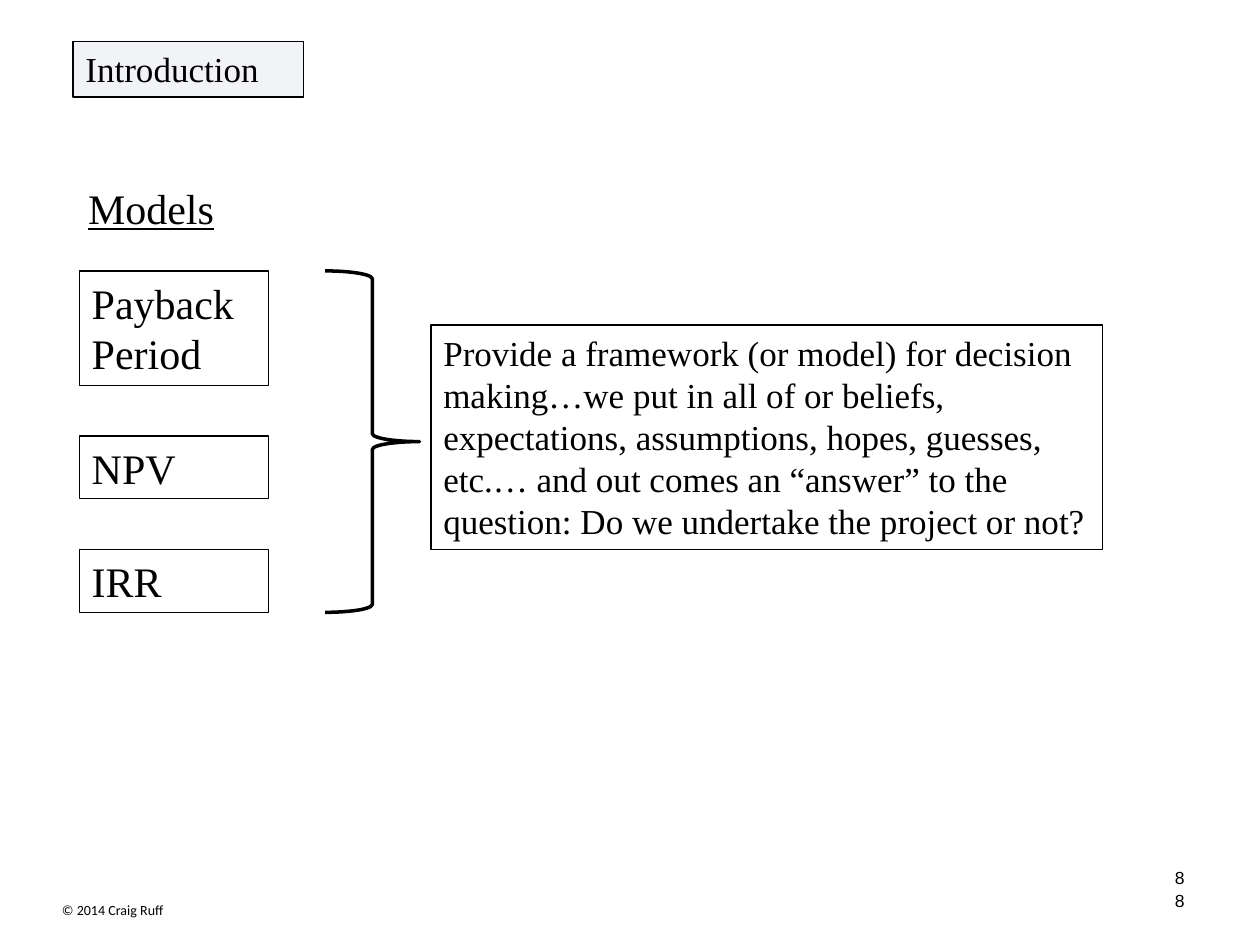
from lxml import etree
from pptx import Presentation
from pptx import util as u
from pptx.dml.color import RGBColor
from pptx.enum import shapes, text
from pptx.oxml import ns

BLACK = "000000"
SERIF = "Times New Roman"


def color(value):
    return RGBColor.from_string(value)


def add_text(words, left, top, width, height, size=24, font=SERIF, framed=False,
             underline=None, align=text.PP_ALIGN.LEFT, anchor=text.MSO_ANCHOR.TOP):
    place = [u.Inches(length) for length in (left, top, width, height)]
    if framed:
        box = page.shapes.add_shape(shapes.MSO_SHAPE.RECTANGLE, *place)
        box.shadow.inherit = False
        box.fill.background()
        box.line.color.rgb = color(BLACK)
        box.line.width = u.Pt(0.75)
    else:
        box = page.shapes.add_textbox(*place)
    frame = box.text_frame
    frame.word_wrap = True
    frame.vertical_anchor = anchor
    para = frame.paragraphs[0]
    para.alignment = align
    span = para.add_run()
    span.text = words
    span.font.size = u.Pt(size)
    span.font.name = font
    span.font.underline = underline
    span.font.color.rgb = color(BLACK)
    return box


deck = Presentation()
deck.slide_width, deck.slide_height = u.Inches(10), u.Inches(7.5)
page = deck.slides.add_slide(deck.slide_layouts[6])

# Title with a faint tint
title = add_text("Introduction", 0.58, 0.33, 1.83, 0.44, size=20, framed=True)
title.fill.solid()
title.fill.fore_color.rgb = color("002060")
tint = title.fill._xPr.find(".//" + ns.qn("a:srgbClr"))
etree.SubElement(tint, ns.qn("a:alpha"), val="5000")

# Models, stacked with equal gaps
add_text("Models", 0.6, 1.4, 1.75, 0.5, underline=True)
stack_top, gap = 2.15, 0.4
top = stack_top
for model, height in (("Payback Period", 0.91), ("NPV", 0.5), ("IRR", 0.5)):
    add_text(model, 0.63, top, 1.5, height, framed=True)
    top += height + gap
stack_height = top - gap - stack_top

# Brace spanning the stack
brace = page.shapes.add_shape(
    shapes.MSO_SHAPE.RIGHT_BRACE, u.Inches(2.58), u.Inches(stack_top),
    u.Inches(0.75), u.Inches(stack_height))
brace.shadow.inherit = False
brace.fill.background()
brace.line.color.rgb = color(BLACK)
brace.line.width = u.Pt(2)

# What the models do
add_text("Provide a framework (or model) for decision making…we put in all of or "
         "beliefs, expectations, assumptions, hopes, guesses, etc.… and out comes an "
         "“answer” to the question: Do we undertake the project or not?",
         3.42, 2.58, 5.33, 1.78, size=20, framed=True)

# Footer: page numbers and copyright
add_text("8", 7.42, 6.83, 2.08, 0.5, size=10, font="Arial", align=text.PP_ALIGN.RIGHT)
add_text("8", 7.17, 6.95, 2.33, 0.4, size=10, font="Arial",
         align=text.PP_ALIGN.RIGHT, anchor=text.MSO_ANCHOR.MIDDLE)
add_text("© 2014 Craig Ruff", 0.29, 7.11, 1.21, 0.24, size=8, font="Calibri",
         align=text.PP_ALIGN.CENTER)

deck.save("out.pptx")
